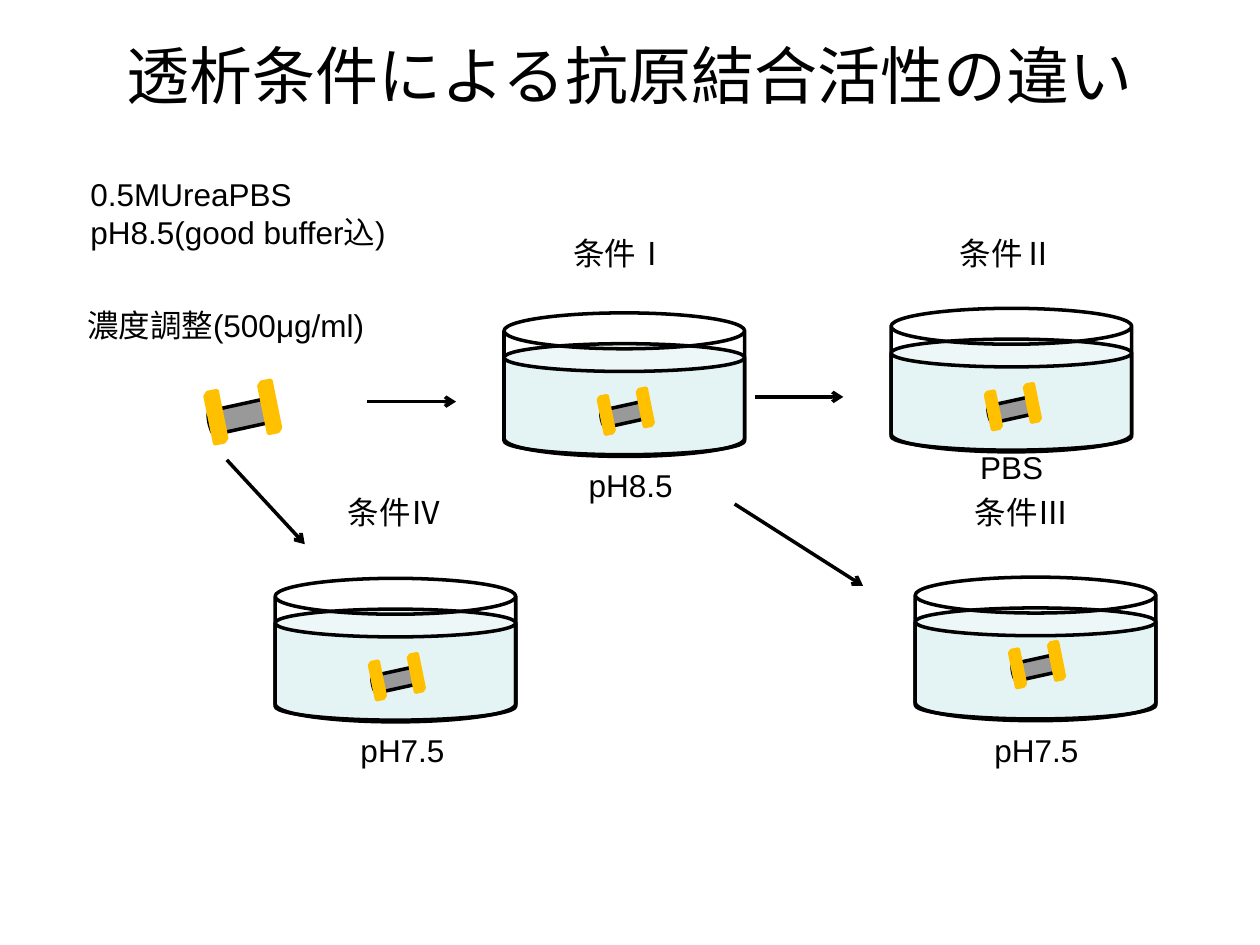
from lxml import etree
from pptx import Presentation
from pptx.dml.color import RGBColor
from pptx.enum.shapes import MSO_CONNECTOR, MSO_SHAPE
from pptx.enum.text import MSO_ANCHOR, PP_ALIGN
from pptx.oxml.ns import qn
from pptx.util import Pt

CAN, CUBE = MSO_SHAPE.CAN, MSO_SHAPE.CUBE
STRAIGHT = MSO_CONNECTOR.STRAIGHT
LEFT, CENTER = PP_ALIGN.LEFT, PP_ALIGN.CENTER
TOP, MIDDLE = MSO_ANCHOR.TOP, MSO_ANCHOR.MIDDLE

BLACK = RGBColor(0x00, 0x00, 0x00)
LIQUID = RGBColor(0xE4, 0xF3, 0xF4)
GRAY = RGBColor(0x99, 0x99, 0x99)
GOLD = RGBColor(0xFF, 0xC0, 0x00)

DISH_WIDTH, DISH_HEIGHT = 137.5, 82
LIQUID_DROP, LIQUID_HEIGHT = 17.6, 63.4


class SlideBuilder:
    font = "Arial"
    numeral_font = "Noto Sans CJK JP"
    line_width = 2

    def __init__(self, page):
        self.page = page

    def text(self, left, top, width, height, lines, align=LEFT, size=18, anchor=TOP):
        """Each line is a list of (text, font) runs."""
        box = self.page.shapes.add_textbox(Pt(left), Pt(top), Pt(width), Pt(height))
        frame = box.text_frame
        frame.word_wrap = True
        frame.vertical_anchor = anchor
        for index, runs in enumerate(lines):
            para = frame.paragraphs[0] if index == 0 else frame.add_paragraph()
            para.alignment = align
            for words, font in runs:
                span = para.add_run()
                span.text = words
                span.font.name = font
                span.font.size = Pt(size)
                span.font.color.rgb = BLACK

    def label(self, left, top, width, height, *lines, **options):
        self.text(left, top, width, height,
                  [[(line, self.font)] for line in lines], **options)

    def condition(self, left, top, width, height, numeral, align=LEFT):
        runs = [("条件", self.font), (numeral, self.numeral_font)]
        self.text(left, top, width, height, [runs], align)

    def solid(self, group, kind, left, top, width, height, fill=None, line=BLACK, angle=0):
        shape = group.shapes.add_shape(kind, Pt(left), Pt(top), Pt(width), Pt(height))
        shape.shadow.inherit = False
        shape.rotation = angle
        if fill is None:
            shape.fill.background()
        else:
            shape.fill.solid()
            shape.fill.fore_color.rgb = fill
        shape.line.color.rgb = line
        shape.line.width = Pt(self.line_width)

    def tube(self, group, x, y, scale=1.0):
        """Dialysis tube centred on (x, y): a body and two clips."""
        parts = [(CAN, 0, 0, 10, 26.8, GRAY, BLACK, 77.6),
                 (CUBE, 12, -4, 5.3, 21.4, GOLD, GOLD, 348.5),
                 (CUBE, -10.3, 0.3, 5.3, 21.4, GOLD, GOLD, 348.5)]
        for kind, dx, dy, width, height, fill, line, angle in parts:
            width, height = width * scale, height * scale
            self.solid(group, kind, x + dx * scale - width / 2,
                       y + dy * scale - height / 2, width, height, fill, line, angle)

    def free_tube(self, x, y, scale):
        self.tube(self.page.shapes.add_group_shape(), x, y, scale)

    def dish(self, left, top, tube_drop=58):
        group = self.page.shapes.add_group_shape()
        self.solid(group, CAN, left, top + LIQUID_DROP, DISH_WIDTH, LIQUID_HEIGHT, LIQUID)
        self.tube(group, left + DISH_WIDTH / 2, top + tube_drop)
        self.solid(group, CAN, left, top, DISH_WIDTH, DISH_HEIGHT)

    def arrow(self, x1, y1, x2, y2):
        link = self.page.shapes.add_connector(STRAIGHT, Pt(x1), Pt(y1), Pt(x2), Pt(y2))
        link.line.color.rgb = BLACK
        link.line.width = Pt(self.line_width)
        etree.SubElement(link.line._get_or_add_ln(), qn("a:tailEnd"), type="arrow")
        etree.SubElement(link._element.spPr, qn("a:effectLst"))


def main():
    deck = Presentation()
    deck.slide_width, deck.slide_height = Pt(720), Pt(540)
    slide = SlideBuilder(deck.slides.add_slide(deck.slide_layouts[6]))

    # Title
    slide.label(36, 20, 648, 45, "透析条件による抗原結合活性の違い",
                align=CENTER, size=36, anchor=MIDDLE)

    # Starting sample
    slide.label(44.6, 96.5, 185, 80.6, "0.5MUreaPBS", "pH8.5(good buffer込)")
    slide.label(38.2, 171.4, 181.4, 45.4, "濃度調整(500μg/ml)", align=CENTER)
    slide.free_tube(137.6, 238, 1.38)

    # Dishes
    slide.dish(288, 178.8)
    slide.dish(509.2, 176.2)
    slide.dish(523, 329.8, tube_drop=51.8)
    slide.dish(157.2, 330.5)

    # Condition names
    slide.condition(320.4, 130.3, 104.4, 41, "Ⅰ")
    slide.condition(541.4, 130.3, 80, 38.2, "Ⅱ")
    slide.condition(550, 278, 86.4, 40.3, "Ⅲ")
    slide.condition(182.2, 278, 87, 34.6, "Ⅳ", CENTER)

    # Buffers
    for left, top, width, words in [(304.6, 262.8, 111.6, "pH8.5"),
                                    (526.3, 252.7, 103.7, "PBS"),
                                    (540, 414, 104.4, "pH7.5"),
                                    (174.2, 414, 111.6, "pH7.5")]:
        slide.label(left, top, width, 36, words, align=CENTER)

    # Transfer arrows
    slide.arrow(210, 229.5, 260.6, 229.5)
    slide.arrow(431.3, 226.8, 481.9, 226.8)
    slide.arrow(419.8, 288, 493.2, 334.8)
    slide.arrow(129.6, 262.8, 174.2, 311)

    deck.save("out.pptx")


if __name__ == "__main__":
    main()
